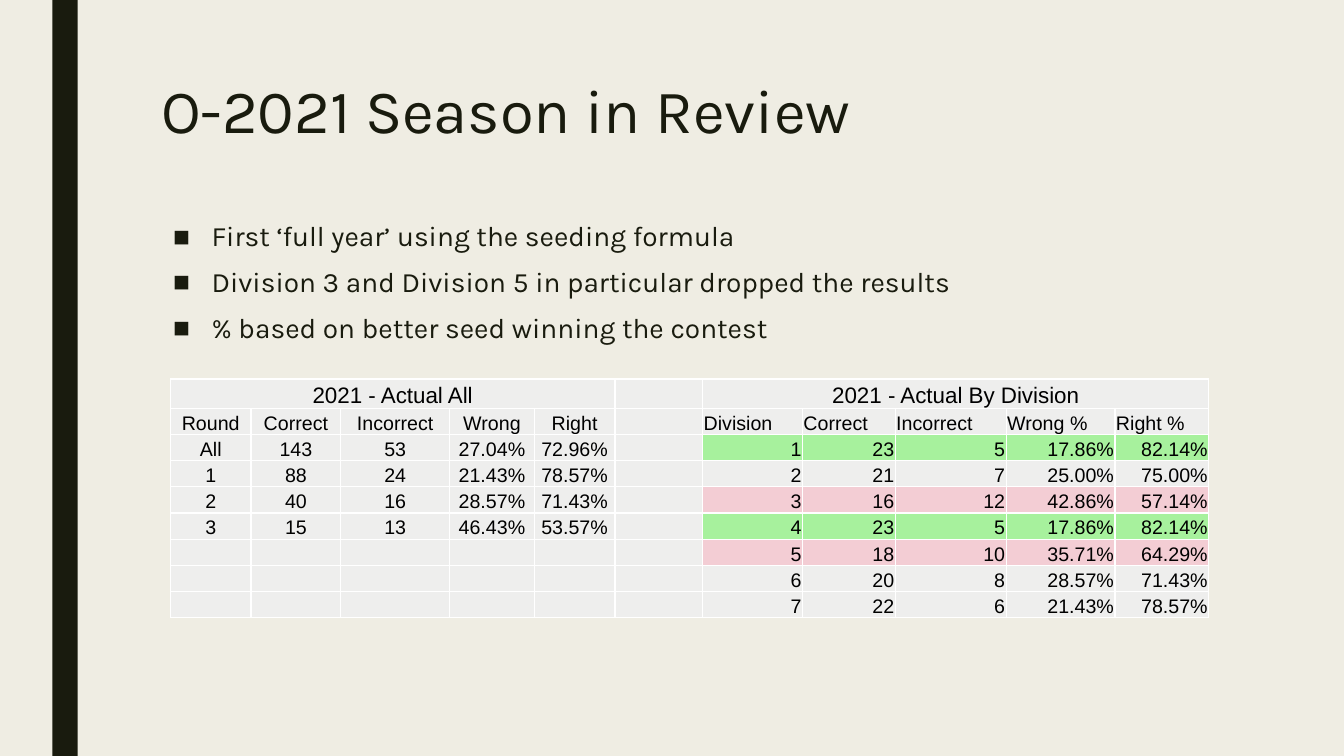
import pptx
import pptx.dml.color
import pptx.enum.shapes
import pptx.enum.text
import pptx.oxml
import pptx.oxml.ns
import pptx.util
from lxml import etree

Inches = pptx.util.Inches
Pt = pptx.util.Pt
RGBColor = pptx.dml.color.RGBColor
ALIGN = pptx.enum.text.PP_ALIGN
qn = pptx.oxml.ns.qn

CREAM = RGBColor(0xEF, 0xED, 0xE3)
INK = RGBColor(0x19, 0x1B, 0x0E)
BLACK = RGBColor(0, 0, 0)
WHITE = RGBColor(0xFF, 0xFF, 0xFF)
GREY = RGBColor(0xEE, 0xEE, 0xED)
GREEN = RGBColor(0xA7, 0xF1, 0x9D)
PINK = RGBColor(0xF3, 0xCD, 0xD4)

BULLETS = [
    "First ‘full year’ using the seeding formula",
    "Division 3 and Division 5 in particular dropped the results",
    "% based on better seed winning the contest",
]

ROUNDS = [
    ["Round", "Correct", "Incorrect", "Wrong", "Right"],
    ["All", "143", "53", "27.04%", "72.96%"],
    ["1", "88", "24", "21.43%", "78.57%"],
    ["2", "40", "16", "28.57%", "71.43%"],
    ["3", "15", "13", "46.43%", "53.57%"],
]
DIVISIONS = [
    ["Division", "Correct", "Incorrect", "Wrong %", "Right %"],
    ["1", "23", "5", "17.86%", "82.14%"],
    ["2", "21", "7", "25.00%", "75.00%"],
    ["3", "16", "12", "42.86%", "57.14%"],
    ["4", "23", "5", "17.86%", "82.14%"],
    ["5", "18", "10", "35.71%", "64.29%"],
    ["6", "20", "8", "28.57%", "71.43%"],
    ["7", "22", "6", "21.43%", "78.57%"],
]
ROW_FILLS = {"1": GREEN, "3": PINK, "4": GREEN, "5": PINK}
COL_WIDTHS = [0.8, 0.89, 1.08, 0.84, 0.8, 0.87, 0.99, 0.92, 1.1, 1.08, 0.93]
ROW_HEIGHTS = [0.29] + [0.26] * 8
DIVISION_COL = 6


class SlideBuilder:
    text_font = "Karla"
    table_font = "Arial"

    def __init__(self, slide):
        self.slide = slide

    def background(self, color):
        fill = self.slide.background.fill
        fill.solid()
        fill.fore_color.rgb = color

    def bar(self, x, y, w, h, color):
        sp = self.slide.shapes.add_shape(
            pptx.enum.shapes.MSO_SHAPE.RECTANGLE,
            Inches(x), Inches(y), Inches(w), Inches(h))
        sp.shadow.inherit = False
        sp.fill.solid()
        sp.fill.fore_color.rgb = color
        sp.line.fill.background()

    def text(self, x, y, w, h, lines, size, spacing, before=0, bullet=None):
        sp = self.slide.shapes.add_textbox(
            Inches(x), Inches(y), Inches(w), Inches(h))
        tf = sp.text_frame
        tf.word_wrap = True
        tf.text = "\n".join(lines)
        for p in tf.paragraphs:
            p.line_spacing = spacing
            p.space_before = Pt(before)
            self.style_run(p.runs[0], self.text_font, size, INK)
            if bullet:
                self.add_bullet(p, bullet)

    def style_run(self, r, font, size, color):
        r.font.name = font
        r.font.size = Pt(size)
        r.font.color.rgb = color

    def add_bullet(self, p, char):
        pPr = p._p.get_or_add_pPr()
        pPr.set("marL", str(Inches(0.5)))
        pPr.set("indent", str(Inches(-0.38)))
        color = etree.SubElement(pPr, qn("a:buClr"))
        etree.SubElement(color, qn("a:srgbClr"), val=str(INK))
        etree.SubElement(pPr, qn("a:buFont"), typeface="Arial")
        etree.SubElement(pPr, qn("a:buChar"), char=char)

    def table(self, x, y, widths, heights):
        frame = self.slide.shapes.add_table(
            len(heights), len(widths), Inches(x), Inches(y),
            Inches(sum(widths)), Inches(sum(heights)))
        table = frame.table
        table.first_row = False
        table.horz_banding = False
        for col, width in zip(table.columns, widths):
            col.width = Inches(width)
        for row, height in zip(table.rows, heights):
            row.height = Inches(height)
        for cell in table.iter_cells():
            self.cell(cell)
        return table

    def cell(self, cell, text="", align=ALIGN.CENTER, size=14, fill=GREY):
        cell.margin_left = cell.margin_right = cell.margin_top = Inches(0.01)
        cell.margin_bottom = 0
        cell.vertical_anchor = pptx.enum.text.MSO_ANCHOR.BOTTOM
        cell.fill.solid()
        cell.fill.fore_color.rgb = fill
        self.borders(cell)
        p = cell.text_frame.paragraphs[0]
        p.text = text
        p.alignment = align
        for r in p.runs:
            self.style_run(r, self.table_font, size, BLACK)
        # Keeps the rows of empty cells from growing
        end = p._p.find(qn("a:endParaRPr"))
        if end is None:
            end = etree.SubElement(p._p, qn("a:endParaRPr"))
        end.set("sz", str(size * 100))

    def borders(self, cell):
        tcPr = cell._tc.get_or_add_tcPr()
        for i, tag in enumerate(("a:lnL", "a:lnR", "a:lnT", "a:lnB")):
            old = tcPr.find(qn(tag))
            if old is not None:
                tcPr.remove(old)
            ln = pptx.oxml.parse_xml(
                f'<{tag} {pptx.oxml.ns.nsdecls("a")} w="{Pt(1)}"><a:solidFill>'
                f'<a:srgbClr val="{WHITE}"/></a:solidFill></{tag}>')
            tcPr.insert(i, ln)


def main():
    prs = pptx.Presentation()
    prs.slide_width = Inches(13.33)
    prs.slide_height = Inches(7.5)
    s = SlideBuilder(prs.slides.add_slide(prs.slide_layouts[6]))

    # Background and side bar
    s.background(CREAM)
    s.bar(0.52, 0, 0.25, 7.5, INK)

    # Title and bullets
    s.text(1.5, 0.75, 10.5, 1.62, ["O-2021 Season in Review"], 44, 0.89)
    s.text(1.5, 2.15, 10.67, 1.5, BULLETS, 20, 0.94, before=10, bullet="■")

    # Results table: group headings
    table = s.table(1.69, 3.76, COL_WIDTHS, ROW_HEIGHTS)
    for col, heading in ((0, "2021 - Actual All"),
                         (DIVISION_COL, "2021 - Actual By Division")):
        table.cell(0, col).merge(table.cell(0, col + 4))
        s.cell(table.cell(0, col), heading, size=16)

    # Results by round
    for i, values in enumerate(ROUNDS, 1):
        for j, value in enumerate(values):
            s.cell(table.cell(i, j), value)

    # Results by division
    for i, values in enumerate(DIVISIONS, 1):
        align = ALIGN.LEFT if i == 1 else ALIGN.RIGHT
        fill = ROW_FILLS.get(values[0], GREY)
        for j, value in enumerate(values, DIVISION_COL):
            s.cell(table.cell(i, j), value, align, fill=fill)

    prs.save("out.pptx")


if __name__ == "__main__":
    main()
